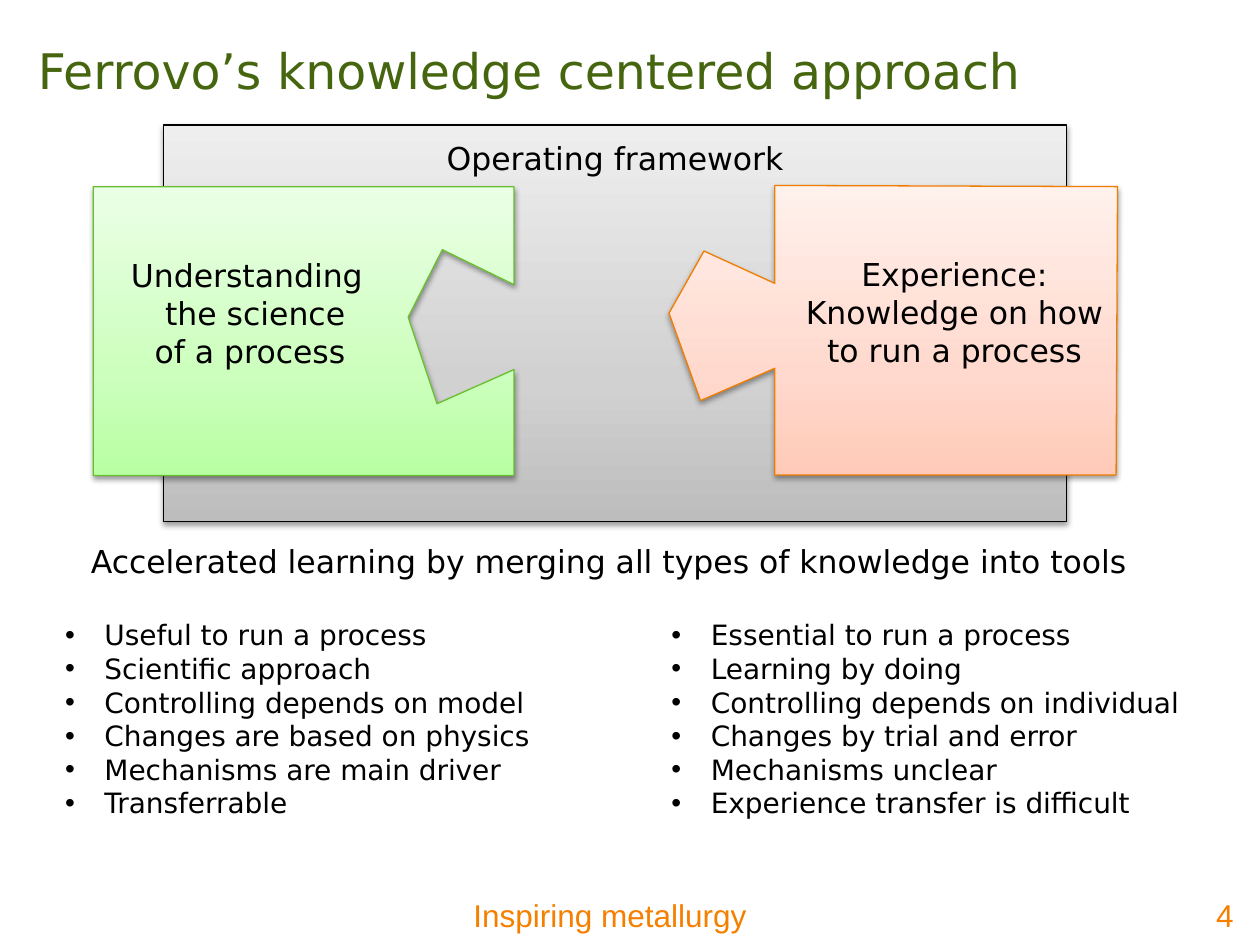
from copy import deepcopy

from lxml import etree
from pptx import Presentation
from pptx.dml.color import RGBColor
from pptx.enum.shapes import MSO_SHAPE
from pptx.enum.text import MSO_ANCHOR, MSO_AUTO_SIZE, PP_ALIGN
from pptx.oxml.ns import qn
from pptx.util import Pt

RECTANGLE = MSO_SHAPE.RECTANGLE
TOP, MIDDLE = MSO_ANCHOR.TOP, MSO_ANCHOR.MIDDLE
LEFT, CENTER, RIGHT = PP_ALIGN.LEFT, PP_ALIGN.CENTER, PP_ALIGN.RIGHT
NO_AUTOFIT = MSO_AUTO_SIZE.NONE

COLORS = {"text": "000000", "title": "45660E", "accent": "F58000",
          "science": "67BF2F", "experience": "F07D00"}
GRADIENTS = {"framework": ("BDBDBD", "D1D1D1", "EEEEEE"),
             "science": ("B8FFA2", "CCFFBD", "EBFFE6"),
             "experience": ("FFCAB8", "FFD9CD", "FFF1EC")}
STOP_POSITIONS = (0, 0.35, 1)
BODY_FONT, FOOTER_FONT = "DejaVu Sans", "Arial"
LINE_HEIGHT = 21

SCIENCE_OUTLINE = [(0, 0), (0, 165), (240.5, 165), (240.5, 104.5), (196.5, 124),
                   (180, 74.5), (199.5, 36), (240.5, 56), (240.5, 0)]
EXPERIENCE_OUTLINE = [(60.5, 0), (60.5, 56), (20, 37.5), (0, 73), (18, 123),
                      (60.5, 104.5), (60.5, 165.5), (255.5, 165.5), (256.3, 0.7)]
SCIENCE_POINTS = ["Useful to run a process", "Scientific approach",
                  "Controlling depends on model", "Changes are based on physics",
                  "Mechanisms are main driver", "Transferrable"]
EXPERIENCE_POINTS = ["Essential to run a process", "Learning by doing",
                     "Controlling depends on individual", "Changes by trial and error",
                     "Mechanisms unclear", "Experience transfer is difficult"]


def place(shape, box):
    for side, value in zip(("left", "top", "width", "height"), box):
        setattr(shape, side, Pt(value))


def write(frame, lines, size=18, color="text", font=BODY_FONT, align=LEFT,
          anchor=TOP, indents=None, bullet=None, **margins):
    """Fill a text frame; indents holds (left margin, first-line indent) per line."""
    settings = {"word_wrap": True, "auto_size": NO_AUTOFIT, "vertical_anchor": anchor}
    settings.update({f"margin_{side}": Pt(value) for side, value in margins.items()})
    for name, value in settings.items():
        setattr(frame, name, value)
    frame.text = "\n".join(lines)
    for number, paragraph in enumerate(frame.paragraphs):
        paragraph.alignment = align
        paragraph.space_before = Pt(0)
        properties = paragraph._p.get_or_add_pPr()
        if indents:
            margin, first = indents[number]
            properties.set("marL", str(Pt(margin)))
            properties.set("indent", str(Pt(first)))
        if bullet:
            etree.SubElement(properties, qn("a:buChar"), char=bullet)
        for name, value in {"name": font, "size": Pt(size)}.items():
            setattr(paragraph.font, name, value)
        paragraph.font.color.rgb = RGBColor.from_string(COLORS[color])


def style_panel(shape, gradient, line):
    """Apply the vertical gradient, thin outline and soft shadow of a panel."""
    shape.fill.gradient()
    shape.fill.gradient_angle = 90
    properties = shape._element.spPr
    stop_list = properties.find(".//" + qn("a:gsLst"))
    stop_list.insert(1, deepcopy(stop_list[0]))
    for stop, position, color in zip(shape.fill.gradient_stops, STOP_POSITIONS,
                                     GRADIENTS[gradient]):
        stop.position = position
        stop.color.rgb = RGBColor.from_string(color)
    shape.line.color.rgb = RGBColor.from_string(COLORS[line])
    shape.line.width = Pt(0.75)

    shape.shadow.inherit = False
    shadow = etree.SubElement(properties.find(qn("a:effectLst")), qn("a:outerShdw"),
                              blurRad=str(Pt(3.1)), dist=str(Pt(1.6)),
                              dir="5400000", rotWithShape="0")
    shade = etree.SubElement(shadow, qn("a:srgbClr"), val=COLORS["text"])
    etree.SubElement(shade, qn("a:alpha"), val="38000")


def add_piece(slide, left, top, outline, kind):
    """Draw a puzzle piece whose outline is relative to its left top corner."""
    points = [(Pt(x), Pt(y)) for x, y in outline]
    builder = slide.shapes.build_freeform(*points[0])
    builder.add_line_segments(points[1:], close=True)
    piece = builder.convert_to_shape(Pt(left), Pt(top))
    style_panel(piece, kind, kind)
    return piece


def add_label(slide, box, text, **formats):
    label = slide.shapes.add_textbox(*map(Pt, box))
    write(label.text_frame, [text], **formats)


def add_framework(slide, box):
    left, top = box[:2]
    framework = slide.shapes.add_shape(RECTANGLE, *map(Pt, box))
    style_panel(framework, "framework", "text")
    write(framework.text_frame, ["Operating framework"], align=CENTER, top=8)

    raised = {"anchor": MIDDLE, "bottom": 3.6 + LINE_HEIGHT}
    science = add_piece(slide, left - 40.2, top + 35.2, SCIENCE_OUTLINE, "science")
    write(science.text_frame, ["Understanding", "the science", "of a process"],
          indents=[(0, 14.4), (34, 0), (28, 0)], **raised)
    experience = add_piece(slide, left + 288.8, top + 34.5, EXPERIENCE_OUTLINE,
                           "experience")
    write(experience.text_frame, ["Experience: Knowledge on how to run a process"],
          align=CENTER, indents=[(70, 0)], **raised)


def fill_title(title, box):
    place(title, box)
    write(title.text_frame, ["Ferrovo’s knowledge centered approach"],
          size=28, color="title", anchor=MIDDLE)


def fill_list(body, box, points):
    place(body, box)
    write(body.text_frame, points, size=16, bullet="•",
          indents=[(22.5, -22.5)] * len(points))


def add_footer(slide, top):
    formats = {"color": "accent", "font": FOOTER_FONT}
    add_label(slide, (263.5, top, 175, 29), "Inspiring metallurgy", **formats)
    add_label(slide, (649.5, top, 62.5, 31.5), "4", align=RIGHT, **formats)


def main():
    presentation = Presentation()
    presentation.slide_width, presentation.slide_height = Pt(720), Pt(540)
    slide = presentation.slides.add_slide(presentation.slide_layouts[3])
    title, science_list, experience_list = slide.placeholders

    fill_title(title, (14.4, 3, 648, 73.5))
    add_framework(slide, (93.5, 71.5, 516, 226.5))
    add_label(slide, (44.8, 306, 613.5, 29),
              "Accelerated learning by merging all types of knowledge into tools")
    fill_list(science_list, (30, 349.5, 335, 124), SCIENCE_POINTS)
    fill_list(experience_list, (376.5, 349.5, 310, 124), EXPERIENCE_POINTS)
    add_footer(slide, 508.5)
    presentation.save("out.pptx")


if __name__ == "__main__":
    main()
